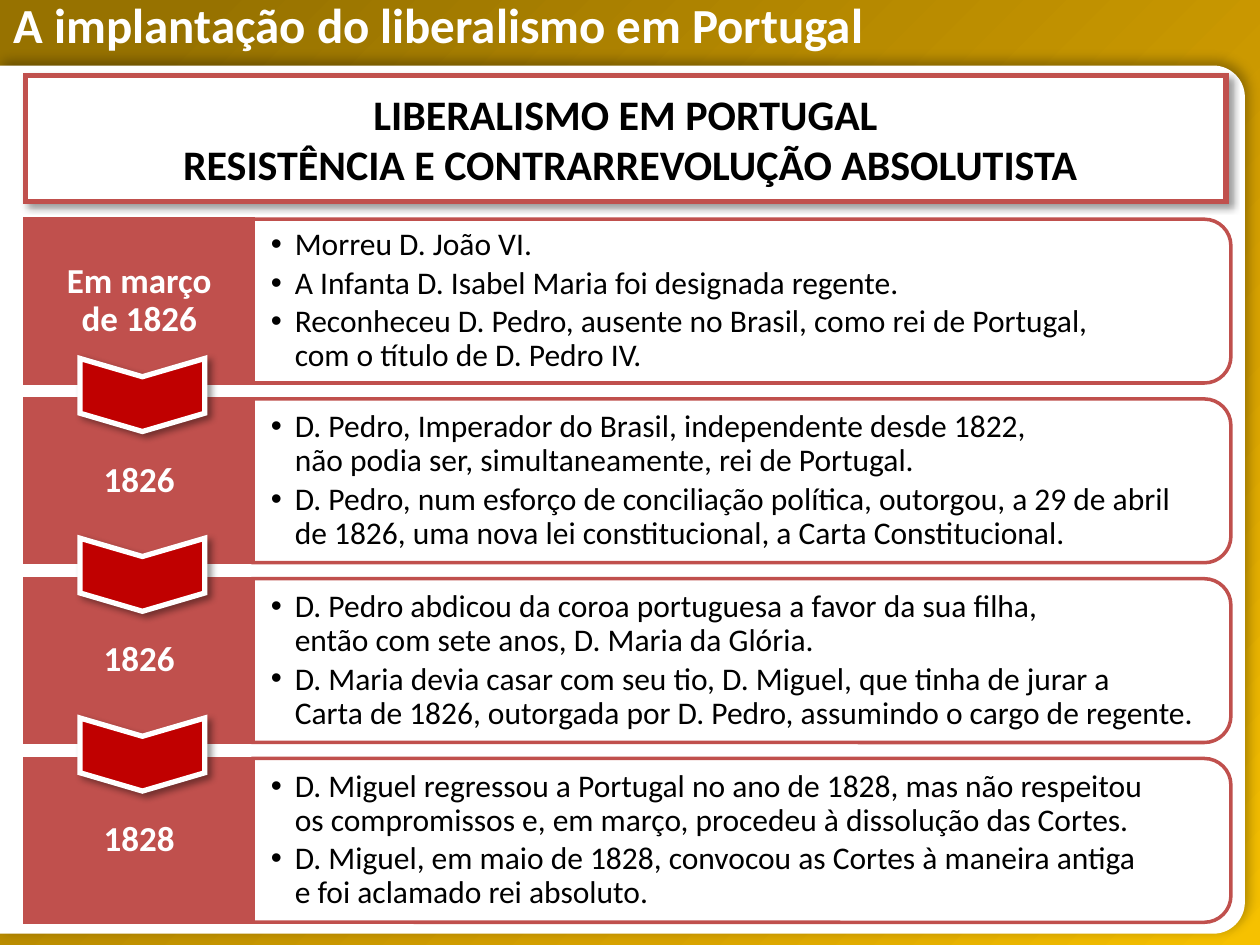
from lxml import etree
from pptx import Presentation
from pptx.dml.color import RGBColor
from pptx.enum.shapes import MSO_SHAPE as Kind
from pptx.enum.text import MSO_ANCHOR as Anchor, MSO_AUTO_SIZE as Fit, PP_ALIGN as Align
from pptx.oxml.ns import qn
from pptx.util import Inches, Pt

TITLE = "A implantação do liberalismo em Portugal"
HEAD = ["LIBERALISMO EM PORTUGAL", " RESISTÊNCIA E CONTRARREVOLUÇÃO ABSOLUTISTA"]
ROWS = [
    (["Em março", "de 1826"], [
        ["Morreu D. João VI."],
        ["A Infanta D. Isabel Maria foi designada regente."],
        ["Reconheceu D. Pedro, ausente no Brasil, como rei de Portugal,",
         "com o título de D. Pedro IV."]]),
    (["1826"], [
        ["D. Pedro, Imperador do Brasil, independente desde 1822,",
         "não podia ser, simultaneamente, rei de Portugal."],
        ["D. Pedro, num esforço de conciliação política, outorgou, a 29 de abril",
         "de 1826, uma nova lei constitucional, a Carta Constitucional."]]),
    (["1826"], [
        ["D. Pedro abdicou da coroa portuguesa a favor da sua filha,",
         "então com sete anos, D. Maria da Glória."],
        ["D. Maria devia casar com seu tio, D. Miguel, que tinha de jurar a",
         "Carta de 1826, outorgada por D. Pedro, assumindo o cargo de regente."]]),
    (["1828"], [
        ["D. Miguel regressou a Portugal no ano de 1828, mas não respeitou",
         "os compromissos e, em março, procedeu à dissolução das Cortes."],
        ["D. Miguel, em maio de 1828, convocou as Cortes à maneira antiga",
         "e foi aclamado rei absoluto."]]),
]
HEX = {"gold": "CC9900", "white": "FFFFFF", "black": "000000",
       "brick": "C0504D", "red": "C00000"}
GOLDS = [(9, "977200"), (72, "D7A200"), (100, "F6C100")]
FONT = "Calibri"
TOP, LAST, HIGH = 1.74, 6.02, 1.3
STEP = (LAST - TOP) / (len(ROWS) - 1)
LEFT, SPLIT, RIGHT = 0.2, 2.01, 9.77


def rgb(name):
    return RGBColor.from_string(HEX[name])


def node(parent, tag, **attrs):
    item = etree.SubElement(parent, qn(tag))
    for key, val in attrs.items():
        item.set(key, str(val))
    return item


def paint(shape, fill, line=None, width=0):
    shape.shadow.inherit = False
    shape.fill.solid()
    shape.fill.fore_color.rgb = rgb(fill)
    if line:
        shape.line.color.rgb = rgb(line)
        shape.line.width = Pt(width)
        node(shape.line._ln, "a:miter", lim=800000)
    else:
        shape.line.fill.background()


def shade(shape, alpha, blur, dist, angle):
    """Cast an outer black shadow; alpha in percent, blur and dist in points."""
    effects = shape._element.spPr.find(qn("a:effectLst"))
    outer = node(effects, "a:outerShdw", blurRad=Pt(blur), dist=Pt(dist),
                 dir=angle * 60000, algn="tl", rotWithShape=0)
    color = node(outer, "a:srgbClr", val=HEX["black"])
    node(color, "a:alpha", val=alpha * 1000)


def blend(shape):
    """Fill with the diagonal gold gradient."""
    shape.fill.gradient()
    grad = shape._element.spPr.find(qn("a:gradFill"))
    stops = grad.find(qn("a:gsLst"))
    for old in list(stops):
        stops.remove(old)
    for pos, color in GOLDS:
        node(node(stops, "a:gs", pos=pos * 1000), "a:srgbClr", val=color)
    grad.find(qn("a:lin")).set("ang", str(45 * 60000))


def box(kind, x, y, w, h):
    return slide.shapes.add_shape(kind, *map(Inches, (x, y, w, h)))


def tab(x, y, w, h, r):
    """Draw a box whose two right corners are curves of radius r."""
    pen = slide.shapes.build_freeform(Inches(x), Inches(y), scale=1.0)
    points = [(w - r, 0), (w, r), (w, h - r), (w - r, h), (0, h)]
    pen.add_line_segments([(Inches(x + a), Inches(y + b)) for a, b in points],
                          close=True)
    shape = pen.convert_to_shape()
    lines = list(shape._element.iter(qn("a:lnTo")))
    k = r * 0.45
    curves = [(lines[1], [(w - k, 0), (w, k), (w, r)]),
              (lines[3], [(w, h - k), (w - k, h), (w - r, h)])]
    for line, pts in curves:
        bend = etree.Element(qn("a:cubicBezTo"))
        for a, b in pts:
            node(bend, "a:pt", x=Inches(a), y=Inches(b))
        line.getparent().replace(line, bend)
    return shape


def frame(shape, anchor, ins=(0.1, 0.05, 0.1, 0.05)):
    text = shape.text_frame
    text.word_wrap = True
    text.vertical_anchor = anchor
    (text.margin_left, text.margin_top,
     text.margin_right, text.margin_bottom) = map(Inches, ins)
    return text


def write(par, lines, size, color, bold, align, space=None):
    par.alignment = align
    if space:
        par.line_spacing = space
    for i, line in enumerate(lines):
        if i:
            par.add_line_break()
        run = par.add_run()
        run.text = line
        run.font.name, run.font.size, run.font.bold = FONT, Pt(size), bold
        run.font.color.rgb = rgb(color)


def bullet(par):
    par.level = 1
    par.space_after = Pt(2.5)
    props = par._p.get_or_add_pPr()
    props.set("marL", str(Inches(0.19)))
    props.set("indent", str(-Inches(0.19)))
    node(props, "a:buFont", typeface="Arial")
    node(props, "a:buChar", char="•")


deck = Presentation()
deck.slide_width, deck.slide_height = Inches(10), Inches(7.5)
slide = deck.slides.add_slide(deck.slide_layouts[5])
slide.background.fill.solid()
slide.background.fill.fore_color.rgb = rgb("gold")

back = box(Kind.RECTANGLE, 0, 0, 10, 7.5)
paint(back, "gold")
blend(back)

title = slide.shapes.title
slide.shapes._spTree.append(title._element)
title.left, title.top, title.width, title.height = map(Inches, (0.01, 0.15, 8.4, 0.33))
text = frame(title, Anchor.TOP)
text.auto_size = Fit.SHAPE_TO_FIT_TEXT
write(text.paragraphs[0], [TITLE], 28, "white", True, Align.LEFT, Pt(16))

panel = tab(0, 0.52, 9.88, 6.89, 0.25)
paint(panel, "white")
shade(panel, 30, 7, 3, 315)

for n, (label, points) in enumerate(ROWS):
    y = TOP + n * STEP
    date = box(Kind.RECTANGLE, LEFT, y, SPLIT - LEFT, HIGH)
    paint(date, "brick", "brick", 2)
    text = frame(date, Anchor.MIDDLE, (0.01, 0, 0.01, 0))
    write(text.paragraphs[0], label, 20, "white", True, Align.CENTER, 0.9)

    card = tab(SPLIT, y, RIGHT - SPLIT, HIGH, 0.21)
    paint(card, "white", "brick", 2)
    color = card._element.spPr.find(qn("a:solidFill"))[0]
    node(color, "a:alpha", val=90000)
    text = frame(card, Anchor.MIDDLE, (0.14, 0.08, 0.08, 0.08))
    for i, lines in enumerate(points):
        par = text.add_paragraph() if i else text.paragraphs[0]
        write(par, lines, 18, "black", False, Align.LEFT, 0.9)
        bullet(par)

for n in range(len(ROWS) - 1):
    arrow = box(Kind.CHEVRON, 0.84, TOP + n * STEP + 0.9, 0.58, 0.99)
    arrow.rotation = 90
    arrow.adjustments[0] = 0.25
    paint(arrow, "red", "white", 3)
    shade(arrow, 40, 4, 3, 45)

head = box(Kind.RECTANGLE, LEFT, 0.6, 9.53, 1)
paint(head, "white", "brick", 3)
shade(head, 40, 4, 3, 45)
write(frame(head, Anchor.MIDDLE).paragraphs[0], HEAD, 24, "black", True, Align.CENTER)

deck.save("out.pptx")
